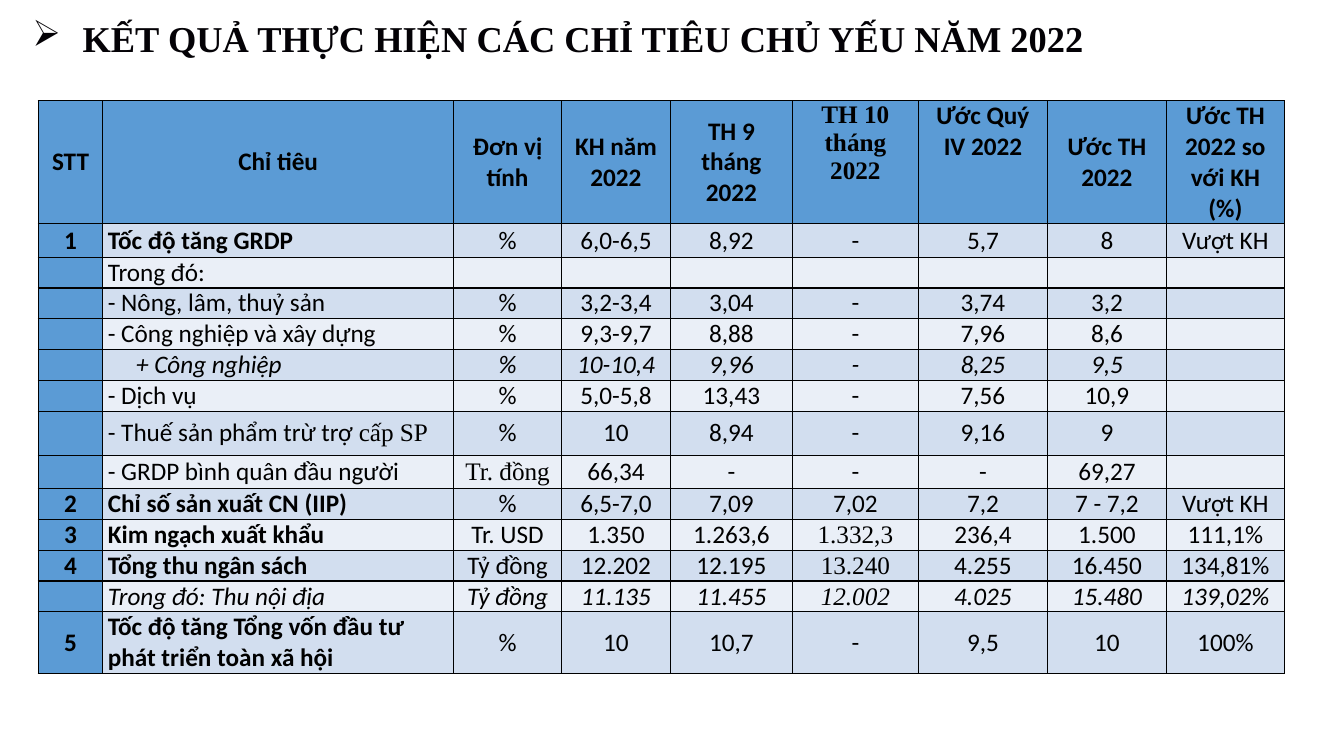
from dataclasses import dataclass

from lxml.etree import SubElement
from pptx import Presentation
from pptx.dml.color import RGBColor
from pptx.enum.text import MSO_ANCHOR, MSO_AUTO_SIZE, PP_ALIGN
from pptx.oxml import parse_xml
from pptx.oxml.ns import nsdecls, qn
from pptx.util import Inches, Pt


@dataclass(frozen=True)
class Theme:
    sans: str = "Calibri"
    serif: str = "Times New Roman"
    ink: str = "000000"
    title: str = "040206"
    head: str = "5B9BD5"
    bands: tuple = ("EAEFF7", "D2DEEF")
    big: int = 26
    size: int = 18


THEME = Theme()
TITLE = "KẾT QUẢ THỰC HIỆN CÁC CHỈ TIÊU CHỦ YẾU NĂM 2022"
WIDTHS = [0.64, 3.48, 1.07, 1.08, 1.21, 1.25, 1.28, 1.18, 1.17]
HEIGHTS = [1.2, 0.33] + [0.3] * 5 + [0.44, 0.33] + [0.3] * 4 + [0.6]
# Text after a bar is set in the serif face
ROWS = [
    ["STT", "Chỉ tiêu", "Đơn vị tính", "KH năm 2022", "TH 9 tháng 2022",
     "|TH 10 tháng 2022", "Ước Quý IV 2022", "Ước TH 2022", "Ước TH 2022 so với KH (%)"],
    ["1", "Tốc độ tăng GRDP", "%", "6,0-6,5", "8,92", "-", "5,7", "8", "Vượt KH"],
    ["", "Trong đó:", "", "", "", "", "", "", ""],
    ["", "- Nông, lâm, thuỷ sản", "%", "3,2-3,4", "3,04", "-", "3,74", "3,2", ""],
    ["", "- Công nghiệp và xây dựng", "%", "9,3-9,7", "8,88", "-", "7,96", "8,6", ""],
    ["", "+ Công nghiệp", "%", "10-10,4", "9,96", "-", "8,25", "9,5", ""],
    ["", "- Dịch vụ", "%", "5,0-5,8", "13,43", "-", "7,56", "10,9", ""],
    ["", "- Thuế sản phẩm trừ trợ |cấp SP", "%", "10", "8,94", "-", "9,16", "9", ""],
    ["", "- GRDP bình quân đầu người", "|Tr. đồng", "66,34", "-", "-", "-", "69,27", ""],
    ["2", "Chỉ số sản xuất CN (IIP)", "%", "6,5-7,0", "7,09", "7,02", "7,2", "7 - 7,2", "Vượt KH"],
    ["3", "Kim ngạch xuất khẩu", "Tr. USD", "1.350", "1.263,6", "|1.332,3", "236,4", "1.500", "111,1%"],
    ["4", "Tổng thu ngân sách", "Tỷ đồng", "12.202", "12.195", "|13.240", "4.255", "16.450", "134,81%"],
    ["", "Trong đó: Thu nội địa", "Tỷ đồng", "11.135", "11.455", "|12.002", "4.025", "15.480", "139,02%"],
    ["5", "Tốc độ tăng Tổng vốn đầu tư phát triển toàn xã hội", "%", "10", "10,7", "-", "9,5", "10", "100%"],
]
SUB_ROW = 5
ITALIC_ROWS = (SUB_ROW, 12)
TOP_COLS = (5, 6)


def style(run, face, size, color, bold=False, italic=False):
    font = run.font
    font.name, font.size = face, Pt(size)
    font.bold, font.italic = bold, italic
    font.color.rgb = RGBColor.from_string(color)


def indent(para, left, hang=0):
    props = para._p.get_or_add_pPr()
    props.set("marL", str(Inches(left)))
    props.set("indent", str(Inches(-hang)))
    return props


def add_title(slide, left, top, width, height):
    shape = slide.shapes.title
    shape.left, shape.top = Inches(left), Inches(top)
    shape.width, shape.height = Inches(width), Inches(height)
    frame = shape.text_frame
    frame.text = TITLE
    frame.word_wrap = True
    frame.auto_size = MSO_AUTO_SIZE.NONE
    frame.vertical_anchor = MSO_ANCHOR.TOP
    para = frame.paragraphs[0]
    para.alignment = PP_ALIGN.LEFT
    # Arrow bullet with a hanging indent
    SubElement(indent(para, 0.5, 0.5), qn("a:buChar")).set("char", "➢")
    style(para.runs[0], THEME.serif, THEME.big, THEME.title, bold=True)


def add_border(cell):
    props = cell._tc.get_or_add_tcPr()
    for spot, side in enumerate(("lnL", "lnR", "lnT", "lnB")):
        props.insert(spot, parse_xml(
            f'<a:{side} {nsdecls("a")} w="{Pt(1)}"><a:solidFill>'
            f'<a:srgbClr val="{THEME.ink}"/></a:solidFill></a:{side}>'))


def fill_cell(cell, row, col, text):
    # Fill, insets and border
    blue = row == 0 or col == 0
    cell.fill.solid()
    cell.fill.fore_color.rgb = RGBColor.from_string(THEME.head if blue else THEME.bands[row % 2])
    cell.margin_left = cell.margin_right = Inches(0.05)
    cell.margin_top = cell.margin_bottom = 0
    cell.vertical_anchor = MSO_ANCHOR.MIDDLE
    add_border(cell)

    # Text in one or two faces
    para = cell.text_frame.paragraphs[0]
    sans, _, serif = text.partition("|")
    para.text = sans
    if serif:
        para.add_run().text = serif
    bold = blue or (col == 1 and ROWS[row][0] != "")
    for run in para.runs:
        face = THEME.serif if run.text == serif else THEME.sans
        style(run, face, THEME.size, THEME.ink, bold, row in ITALIC_ROWS)

    # Placement of the text
    label = col == 1 and row > 0
    para.alignment = PP_ALIGN.LEFT if label else PP_ALIGN.CENTER
    if label and row == SUB_ROW:
        indent(para, 0.28)
    if row == 0 and col in TOP_COLS:
        cell.vertical_anchor = MSO_ANCHOR.TOP
        para.space_before = Pt(12)


def add_grid(slide, left, top, width, height):
    table = slide.shapes.add_table(len(ROWS), len(WIDTHS), Inches(left), Inches(top),
                                   Inches(width), Inches(height)).table
    for column, size in zip(table.columns, WIDTHS):
        column.width = Inches(size)
    for line, size in zip(table.rows, HEIGHTS):
        line.height = Inches(size)
    for row, texts in enumerate(ROWS):
        for col, text in enumerate(texts):
            fill_cell(table.cell(row, col), row, col, text)


def main():
    deck = Presentation()
    deck.slide_width, deck.slide_height = Inches(13.33), Inches(7.5)
    slide = deck.slides.add_slide(deck.slide_layouts[5])
    add_title(slide, 0.22, 0.11, 12.78, 0.54)
    add_grid(slide, 0.38, 1, sum(WIDTHS), sum(HEIGHTS))
    deck.save("out.pptx")


if __name__ == "__main__":
    main()
